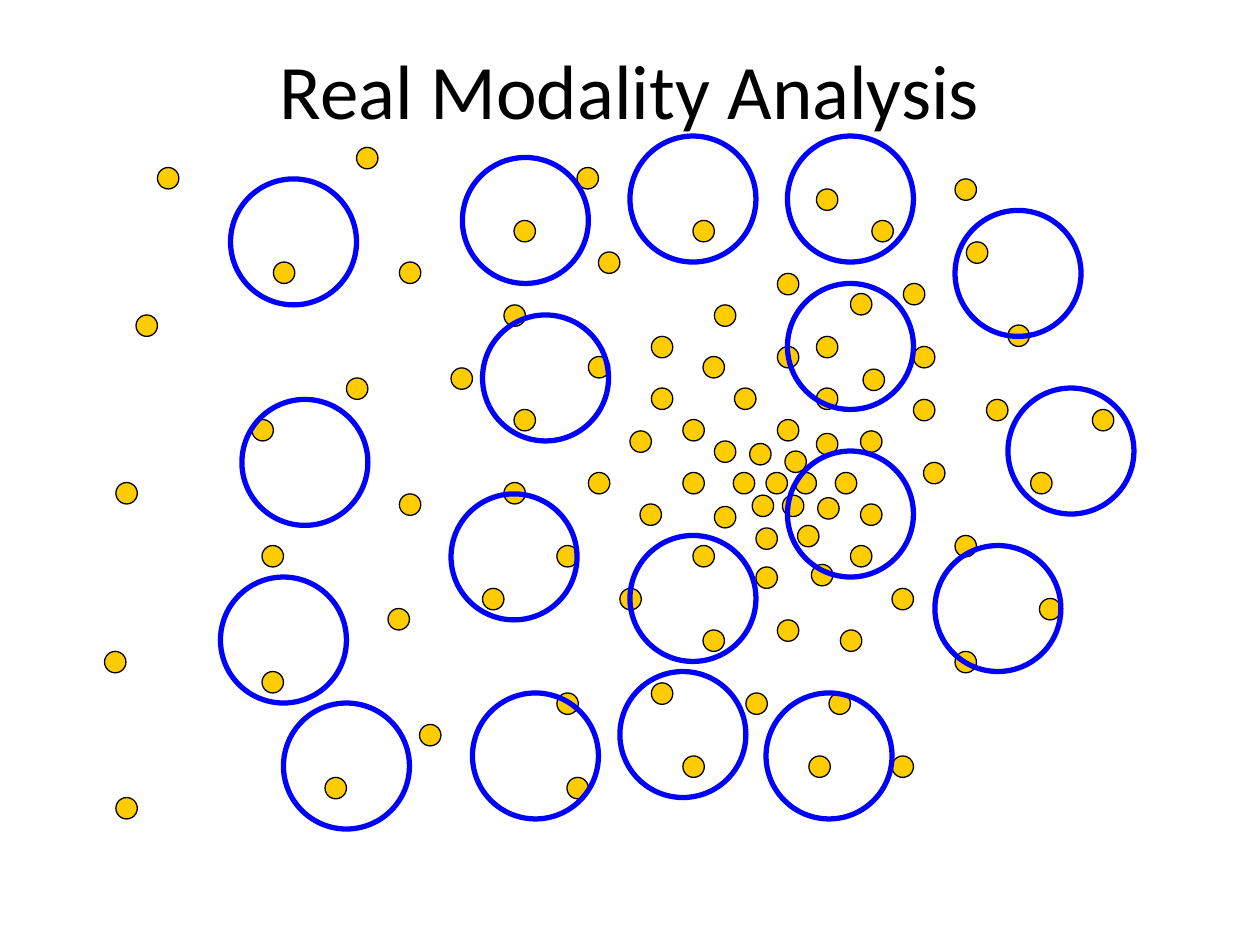
"""Build a slide of scattered data points with circular sampling windows."""
from dataclasses import dataclass

from pptx import Presentation
from pptx.dml.color import RGBColor
from pptx.enum.shapes import MSO_SHAPE
from pptx.enum.text import MSO_ANCHOR, PP_ALIGN
from pptx.util import Cm, Pt

OVAL = MSO_SHAPE.OVAL
MIDDLE = MSO_ANCHOR.MIDDLE
CENTER = PP_ALIGN.CENTER
CM_PER_INCH = 2.54
TITLE_ONLY = 5

COLORS = {"point": "FFCC00", "outline": "000000", "window": "0000FF", "title": "000000"}


@dataclass(frozen=True)
class CircleStyle:
    diameter: float
    line_color: str
    line_width: float
    fill_color: str | None = None


POINT = CircleStyle(0.17, COLORS["outline"], 0.75, COLORS["point"])
WINDOW = CircleStyle(1, COLORS["window"], 3)

POINT_CORNERS = [
    (6.08, 3.75), (6.31, 3.75), (6.23, 3.58), (5.95, 3.52), (6.21, 3.93), (5.97, 3.93),
    (6.49, 3.95), (5.82, 3.75), (6.63, 3.75), (6.48, 3.44), (6.17, 3.33), (6.33, 4.17),
    (6, 4.19), (5.67, 4.02), (5.42, 3.75), (5.67, 3.5), (6.83, 4), (6.75, 4.33),
    (6.44, 4.48), (6, 4.5), (5.5, 4.33), (5.08, 4), (5, 3.42), (5.42, 3.33),
    (5.83, 3.08), (6.48, 3.08), (6.17, 2.75), (5.17, 3.08), (5.58, 2.83), (6.17, 2.17),
    (5.67, 2.42), (6.48, 2.67), (6.48, 1.5), (6.75, 2.33), (6.85, 2.93), (6.83, 3.42),
    (7.25, 3.17), (7.25, 2.75), (7.17, 2.25), (6.92, 1.75), (7.58, 1.42), (7.67, 1.92),
    (8, 2.58), (7.33, 3.67), (7.83, 3.17), (8.67, 3.25), (7.58, 4.25), (8.18, 3.75),
    (7.08, 4.67), (8.25, 4.75), (7.58, 5.17), (6.67, 5), (6.17, 4.92), (6.58, 5.5),
    (7.08, 6), (6.42, 6), (5.92, 5.5), (5.58, 5), (4.92, 4.67), (5.17, 5.42),
    (5.42, 6), (4.5, 6.17), (4.42, 5.5), (3.83, 4.67), (4.42, 4.33), (4.67, 3.75),
    (4.08, 3.25), (4.67, 2.83), (5.17, 2.67), (4.75, 2), (5.5, 1.75), (4.58, 1.33),
    (4.08, 1.75), (4, 2.42), (3.58, 2.92), (4, 3.83), (3.17, 3.92), (3.08, 4.83),
    (3.33, 5.75), (2.58, 6.17), (2.08, 5.33), (2.08, 4.33), (2.75, 3), (3.17, 2.08),
    (2.17, 2.08), (2, 3.33), (0.83, 5.17), (0.92, 6.33), (0.92, 3.83), (1.08, 2.5),
    (1.25, 1.33), (2.83, 1.17),
]
WINDOW_CORNERS = [
    (2.25, 5.58), (1.75, 4.58), (1.92, 3.17), (1.83, 1.42), (3.67, 1.25), (3.75, 5.5),
    (4.92, 5.33), (6.08, 5.5), (7.42, 4.33), (8, 3.08), (7.58, 1.67), (6.25, 1.08),
    (5, 1.08), (3.58, 3.92), (3.83, 2.5), (6.25, 2.25), (6.25, 3.58), (5, 4.25),
]


def length(inches: float) -> Cm:
    """Convert a length on the inch grid to centimetres."""
    return Cm(inches * CM_PER_INCH)


def draw_circle(page, left: float, top: float, style: CircleStyle) -> None:
    """Draw one circle from its top left corner."""
    size = length(style.diameter)
    circle = page.shapes.add_shape(OVAL, length(left), length(top), size, size)
    circle.shadow.inherit = False
    if style.fill_color:
        circle.fill.solid()
        circle.fill.fore_color.rgb = RGBColor.from_string(style.fill_color)
    else:
        circle.fill.background()
    circle.line.color.rgb = RGBColor.from_string(style.line_color)
    circle.line.width = Pt(style.line_width)


def write_title(page, text: str) -> None:
    """Place and format the title placeholder."""
    title = page.shapes.title
    title.left, title.top = length(0.5), length(0.08)
    title.width, title.height = length(9), length(1.25)
    title.text_frame.text = text
    title.text_frame.vertical_anchor = MIDDLE
    para = title.text_frame.paragraphs[0]
    para.alignment = CENTER
    font = para.runs[0].font
    font.name, font.size = "Calibri", Pt(44)
    font.color.rgb = RGBColor.from_string(COLORS["title"])


def main() -> None:
    """Build and save the deck."""
    deck = Presentation()
    deck.slide_width, deck.slide_height = length(10), length(7.5)
    page = deck.slides.add_slide(deck.slide_layouts[TITLE_ONLY])
    write_title(page, "Real Modality Analysis")
    for corners, style in ((POINT_CORNERS, POINT), (WINDOW_CORNERS, WINDOW)):
        for left, top in corners:
            draw_circle(page, left, top, style)
    deck.save("out.pptx")


if __name__ == "__main__":
    main()
